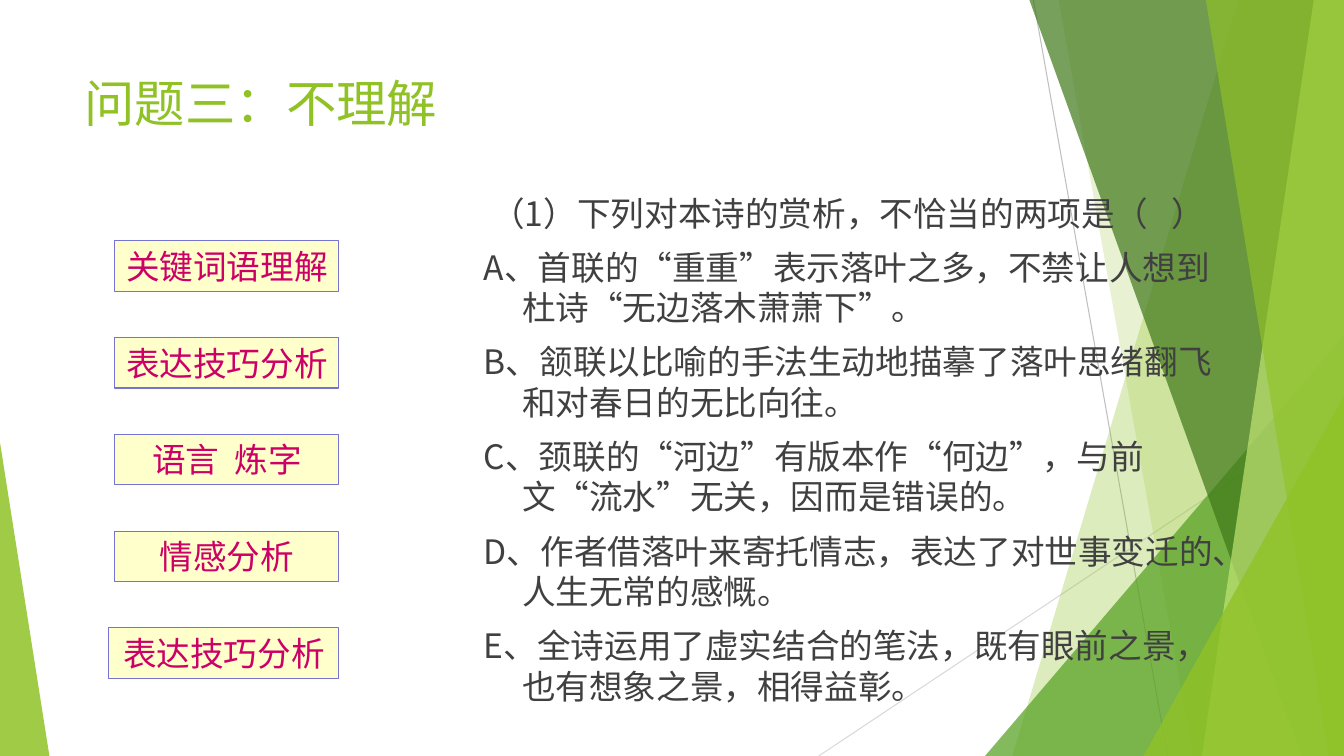
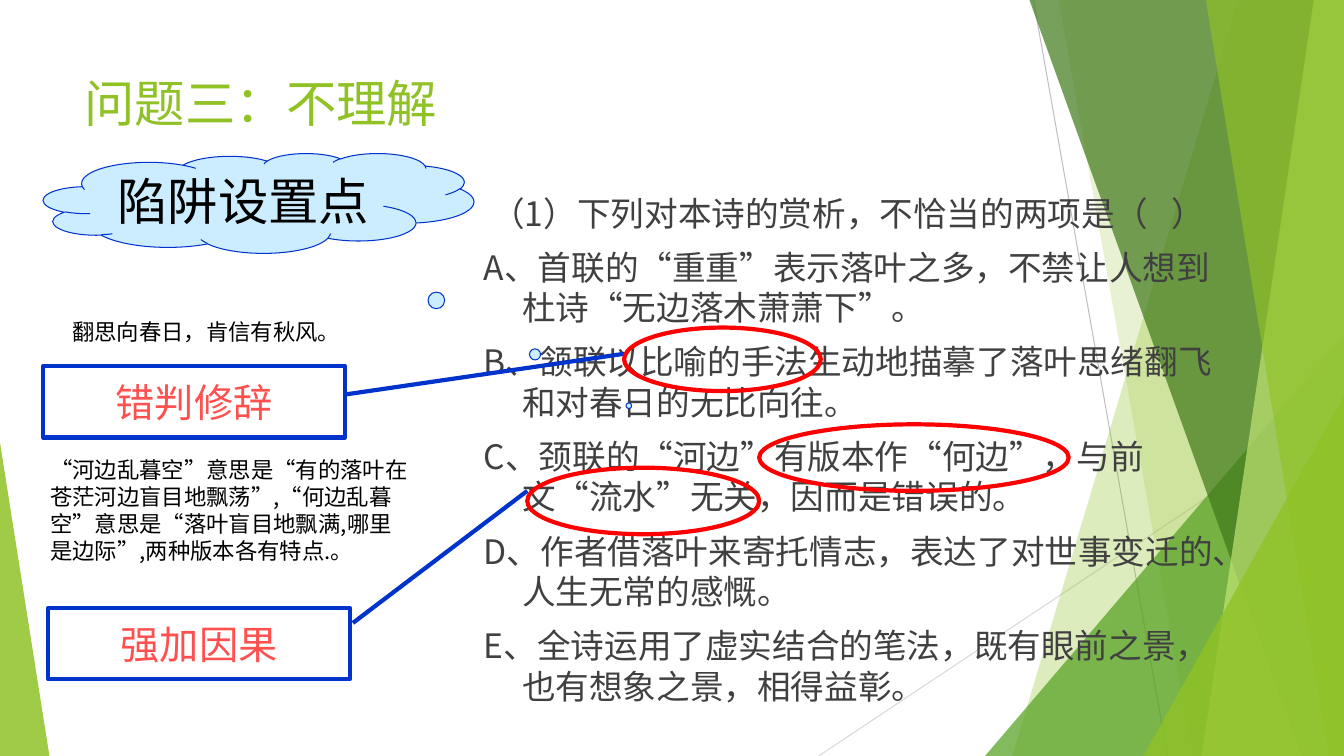
from dataclasses import dataclass

from lxml.etree import SubElement
from pptx import Presentation
from pptx.dml.color import RGBColor
from pptx.enum.lang import MSO_LANGUAGE_ID
from pptx.enum.shapes import MSO_CONNECTOR, MSO_SHAPE
from pptx.enum.text import MSO_ANCHOR, PP_ALIGN
from pptx.oxml.ns import qn
from pptx.util import Inches, Pt


@dataclass(frozen=True)
class Theme:
    width: float = 13.33
    height: float = 7.5
    green: str = "90C226"
    mid_green: str = "54A021"
    dark_green: str = "3F7819"
    pale_green: str = "C0E474"
    gray: str = "BFBFBF"
    light_gray: str = "D9D9D9"
    body: str = "404040"
    black: str = "000000"
    white: str = "FFFFFF"
    label_fill: str = "FFFFCC"
    label_line: str = "7575D1"
    label_text: str = "CC0066"
    blue: str = "0033CC"
    cloud_fill: str = "CCECFF"
    red: str = "FF0000"
    trap_text: str = "FF5050"
    font: str = "Noto Sans CJK SC"
    shape_font: str = "Arial"
    title_size: int = 36
    trap_size: int = 28
    body_size: int = 24
    note_size: int = 16
    thin: float = 0.75
    thick: float = 3


T = Theme()

TITLE = "问题三：不理解"
QUESTION = [
    " （1）下列对本诗的赏析，不恰当的两项是（   ）",
    "A、首联的“重重”表示落叶之多，不禁让人想到杜诗“无边落木萧萧下”。",
    "B、颔联以比喻的手法生动地描摹了落叶思绪翻飞和对春日的无比向往。",
    "C、颈联的“河边”有版本作“何边”，与前文“流水”无关，因而是错误的。",
    "D、作者借落叶来寄托情志，表达了对世事变迁的、人生无常的感慨。",
    "E、全诗运用了虚实结合的笔法，既有眼前之景，也有想象之景，相得益彰。",
]
LABELS = ["关键词语理解", "表达技巧分析", "语言  炼字", "情感分析", "表达技巧分析"]
VERSE = "翻思向春日，肯信有秋风。"
VERSIONS = ("“河边乱暮空”意思是“有的落叶在苍茫河边盲目地飘荡”,“何边乱暮空”意思是"
            "“落叶盲目地飘满,哪里是边际”,两种版本各有特点.。")


def rgb(color):
    return RGBColor.from_string(color)


def paint(sp, fill=None, alpha=100, line=None, weight=T.thin):
    sp.shadow.inherit = False
    if fill:
        sp.fill.solid()
        sp.fill.fore_color.rgb = rgb(fill)
        if alpha < 100:
            clr = sp.fill._xPr.find(qn("a:solidFill"))[0]
            SubElement(clr, qn("a:alpha"), val=str(alpha * 1000))
    else:
        sp.fill.background()
    if line:
        sp.line.color.rgb = rgb(line)
        sp.line.width = Pt(weight)
    else:
        sp.line.fill.background()


def add_shape(s, kind, box, adj=(), **look):
    sp = s.shapes.add_shape(kind, *map(Inches, box))
    for i, value in enumerate(adj):
        sp.adjustments[i] = value
    paint(sp, **look)
    return sp


def add_line(s, start, end, color, weight):
    ln = s.shapes.add_connector(MSO_CONNECTOR.STRAIGHT, *map(Inches, start + end))
    ln.line.color.rgb = rgb(color)
    ln.line.width = Pt(weight)
    SubElement(ln._element.spPr, qn("a:effectLst"))


def write(sp, lines, size, color, font=T.font, align=PP_ALIGN.LEFT,
          anchor=MSO_ANCHOR.TOP, wrap=True, hanging=0, before=0, spacing=None):
    tf = sp.text_frame
    tf.word_wrap = wrap
    tf.vertical_anchor = anchor
    for i, text in enumerate(lines):
        p = tf.add_paragraph() if i else tf.paragraphs[0]
        p.alignment = align
        p.space_before = Pt(before)
        if spacing:
            p.line_spacing = spacing
        if hanging:
            pPr = p._p.get_or_add_pPr()
            pPr.set("marL", str(Inches(hanging)))
            pPr.set("indent", str(-Inches(hanging)))
        p.font.size = Pt(size)
        p.font.name = font
        p.font.color.rgb = rgb(color)
        SubElement(p.font._element, qn("a:ea"), typeface=T.font)
        r = p.add_run()
        r.text = text
        r.font.language_id = MSO_LANGUAGE_ID.SIMPLIFIED_CHINESE


def add_text(s, box, lines, size, color, **style):
    write(s.shapes.add_textbox(*map(Inches, box)), lines, size, color, **style)


def add_veil(s, top_x, bottom_x, color, alpha):
    fb = s.shapes.build_freeform(Inches(top_x), 0)
    corners = [(T.width, 0), (T.width, T.height), (bottom_x, T.height)]
    fb.add_line_segments([(Inches(x), Inches(y)) for x, y in corners])
    paint(fb.convert_to_shape(), fill=color, alpha=alpha)


def add_corner(s, left, top, width, tip, color, alpha):
    add_shape(s, MSO_SHAPE.ISOSCELES_TRIANGLE, (left, top, width, T.height - top),
              adj=[tip], fill=color, alpha=alpha)


def add_backdrop(s):
    add_line(s, (10.25, 0), (11.58, T.height), T.gray, T.thin)
    add_line(s, (T.width, 4.03), (8.12, T.height), T.light_gray, T.thin)
    add_veil(s, 12.28, 10.04, T.green, 30)
    add_veil(s, 10.5, 11.83, T.green, 20)
    add_corner(s, 9.77, 3.33, 3.56, 1, T.mid_green, 72)
    add_veil(s, 10.21, 12.91, T.dark_green, 70)
    add_veil(s, 13.03, 11.92, T.pale_green, 70)
    add_veil(s, 11.96, 13.18, T.green, 65)
    add_corner(s, 11.34, 3.93, 1.99, 1, T.green, 80)
    add_corner(s, 0, 4.39, 0.49, 0, T.green, 85)


def add_question_slide(prs):
    s = prs.slides.add_slide(prs.slide_layouts[6])
    add_backdrop(s)
    add_text(s, (0.74, 0.67, 9.4, 1.44), [TITLE], T.title_size, T.green)
    add_text(s, (4.7, 1.86, 7.72, 4.06), QUESTION, T.body_size, T.body,
             hanging=0.38, before=10)
    return s


def add_label(s, left, top, text):
    sp = add_shape(s, MSO_SHAPE.RECTANGLE, (left, top, 3.36 - left, 0.5),
                   fill=T.label_fill, line=T.label_line)
    write(sp, [text], T.body_size, T.label_text, align=PP_ALIGN.CENTER, wrap=False)


def add_trap(s, left, top, text):
    sp = add_shape(s, MSO_SHAPE.RECTANGLE, (left, top, 2.99, 0.71),
                   fill=T.white, line=T.blue, weight=T.thick)
    write(sp, [text], T.trap_size, T.trap_text, font=T.shape_font,
          align=PP_ALIGN.CENTER, anchor=MSO_ANCHOR.MIDDLE, wrap=False)


def add_cloud(s, box, text):
    sp = add_shape(s, MSO_SHAPE.CLOUD_CALLOUT, box, adj=[0.86, 2.03],
                   fill=T.cloud_fill, line=T.blue)
    write(sp, [text], T.title_size, T.black, font=T.shape_font,
          align=PP_ALIGN.CENTER, anchor=MSO_ANCHOR.MIDDLE)


def add_ring(s, *box):
    add_shape(s, MSO_SHAPE.OVAL, box, line=T.red, weight=T.thick)


def build_labels(prs):
    s = add_question_slide(prs)
    for i, text in enumerate(LABELS):
        left = 1.08 if i == len(LABELS) - 1 else 1.14
        add_label(s, left, 2.39 + 0.96 * i, text)


def build_traps(prs):
    s = add_question_slide(prs)
    add_line(s, (6.19, 3.51), (3.04, 3.97), T.blue, T.thick)
    add_trap(s, 0.43, 3.63, "错判修辞")
    add_cloud(s, (0.43, 1.52, 4.27, 0.99), "陷阱设置点")
    add_ring(s, 6.19, 3.25, 1.95, 0.63)
    add_ring(s, 7.53, 4.21, 3.07, 0.66)
    add_line(s, (5.23, 4.87), (3.5, 6.18), T.blue, T.thick)
    add_trap(s, 0.48, 6.03, "强加因果")
    add_text(s, (0.4, 4.48, 3.78, 1.18), [VERSIONS], T.note_size, T.black)
    add_text(s, (0.6, 2.97, 2.89, 0.46), [VERSE], T.note_size, T.black,
             align=PP_ALIGN.CENTER, wrap=False, spacing=1.5)
    add_ring(s, 5.23, 4.64, 2.3, 0.66)


def main():
    prs = Presentation()
    prs.slide_width = Inches(T.width)
    prs.slide_height = Inches(T.height)
    build_labels(prs)
    build_traps(prs)
    prs.save("out.pptx")


if __name__ == "__main__":
    main()
